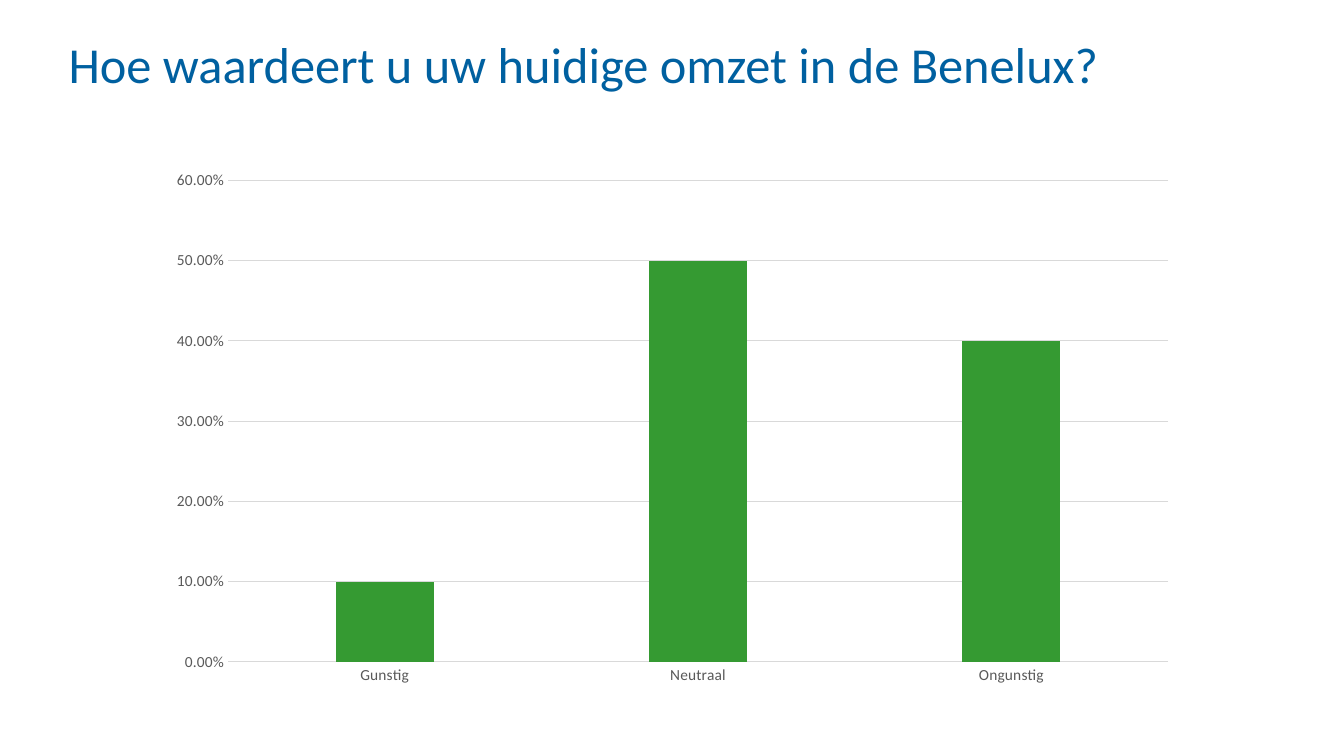
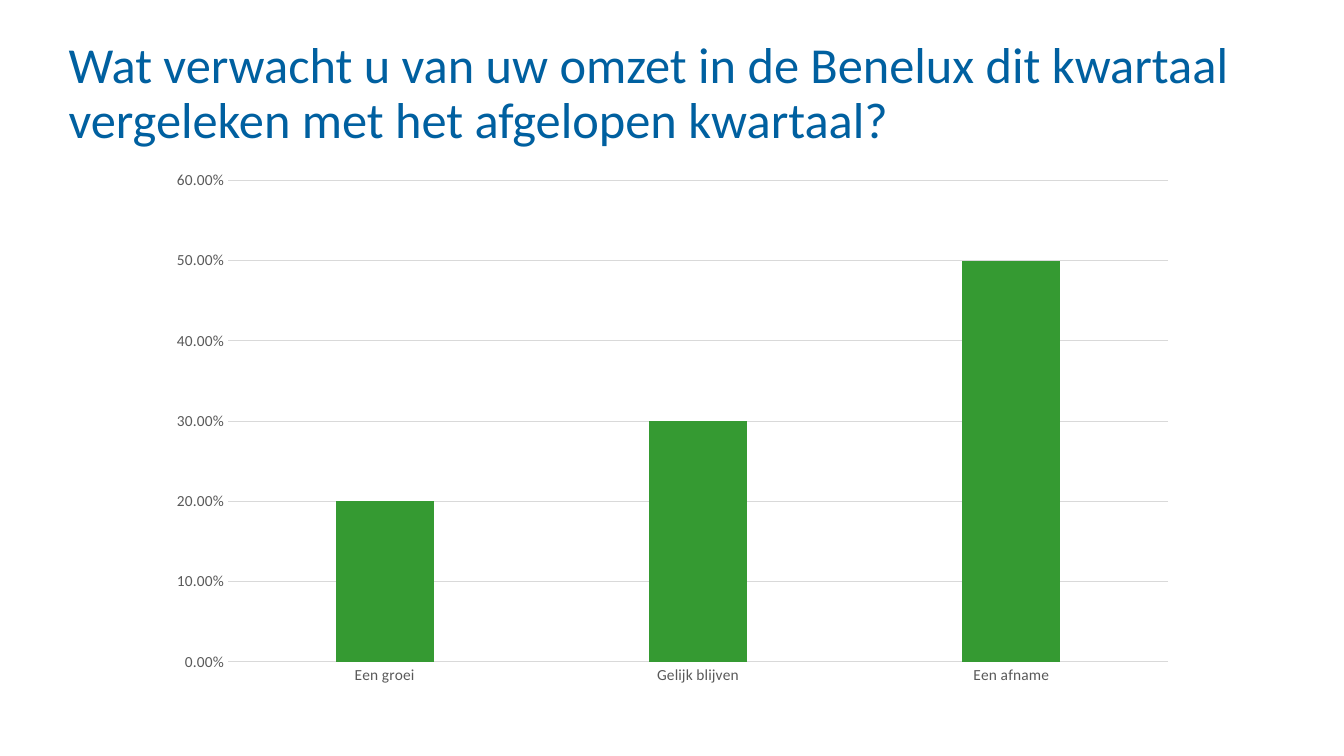
from pptx import Presentation
from pptx.chart.data import CategoryChartData
from pptx.dml.color import RGBColor
from pptx.enum.chart import XL_CHART_TYPE, XL_TICK_MARK
from pptx.enum.text import MSO_ANCHOR
from pptx.util import Inches, Pt

FONT = "Calibri"
BLUE, GREEN, GRAY, RULE = "0060A0", "359A32", "595959", "D9D9D9"
TITLE_BOX = (0.68, 0.4, 12, 0.76)
CHART_BOX = (1.55, 1.59, 10.24, 5.31)

QUESTIONS = [
    ("Hoe waardeert u uw huidige omzet in de Benelux?",
     {"Gunstig": 0.1, "Neutraal": 0.5, "Ongunstig": 0.4}),
    ("Wat verwacht u van uw omzet in de Benelux dit kwartaal "
     "vergeleken met het afgelopen kwartaal?",
     {"Een groei": 0.2, "Gelijk blijven": 0.3, "Een afname": 0.5}),
]


def rgb(color):
    """Turn a hex string into a colour."""
    return RGBColor.from_string(color)


def set_font(font, size, color):
    """Apply the deck font with a size and colour."""
    font.name, font.size = FONT, Pt(size)
    font.color.rgb = rgb(color)


def set_rule(line):
    """Draw a thin light line."""
    line.color.rgb = rgb(RULE)
    line.width = Pt(0.75)


def add_title(s, box, text):
    """Place the question at the top of its box."""
    tf = s.shapes.add_textbox(*map(Inches, box)).text_frame
    tf.word_wrap = True
    tf.vertical_anchor = MSO_ANCHOR.TOP
    tf.margin_left = tf.margin_right = tf.margin_top = tf.margin_bottom = 0
    p = tf.paragraphs[0]
    p.text = text
    p.line_spacing = 0.9
    set_font(p.font, 36, BLUE)


def add_answers(s, box, answers):
    """Place a column chart with the share of each answer."""
    data = CategoryChartData(number_format="0.00%")
    data.categories = list(answers)
    data.add_series("Series 1", list(answers.values()))
    chart = s.shapes.add_chart(
        XL_CHART_TYPE.COLUMN_CLUSTERED, *map(Inches, box), data).chart
    chart.has_legend = chart.has_title = False
    set_font(chart.font, 10, "000000")

    plot = chart.plots[0]
    plot.gap_width, plot.overlap = 219, -27
    plot.vary_by_categories = False
    fill = plot.series[0].format.fill
    fill.solid()
    fill.fore_color.rgb = rgb(GREEN)

    cat, val = chart.category_axis, chart.value_axis
    for axis in (cat, val):
        axis.major_tick_mark = axis.minor_tick_mark = XL_TICK_MARK.NONE
        set_font(axis.tick_labels.font, 11, GRAY)
    set_rule(cat.format.line)
    val.format.line.fill.background()
    val.has_major_gridlines = True
    set_rule(val.major_gridlines.format.line)
    val.minimum_scale, val.maximum_scale, val.major_unit = 0, 0.6, 0.1
    val.tick_labels.number_format = "0.00%"
    val.tick_labels.number_format_is_linked = False


def add_question(prs, title, answers):
    """Add a slide with a question and its answers."""
    s = prs.slides.add_slide(prs.slide_layouts[6])
    add_title(s, TITLE_BOX, title)
    add_answers(s, CHART_BOX, answers)


def main():
    """Build and save the deck."""
    prs = Presentation()
    prs.slide_width, prs.slide_height = Inches(13.33), Inches(7.5)
    for title, answers in QUESTIONS:
        add_question(prs, title, answers)
    prs.save("out.pptx")


if __name__ == "__main__":
    main()
